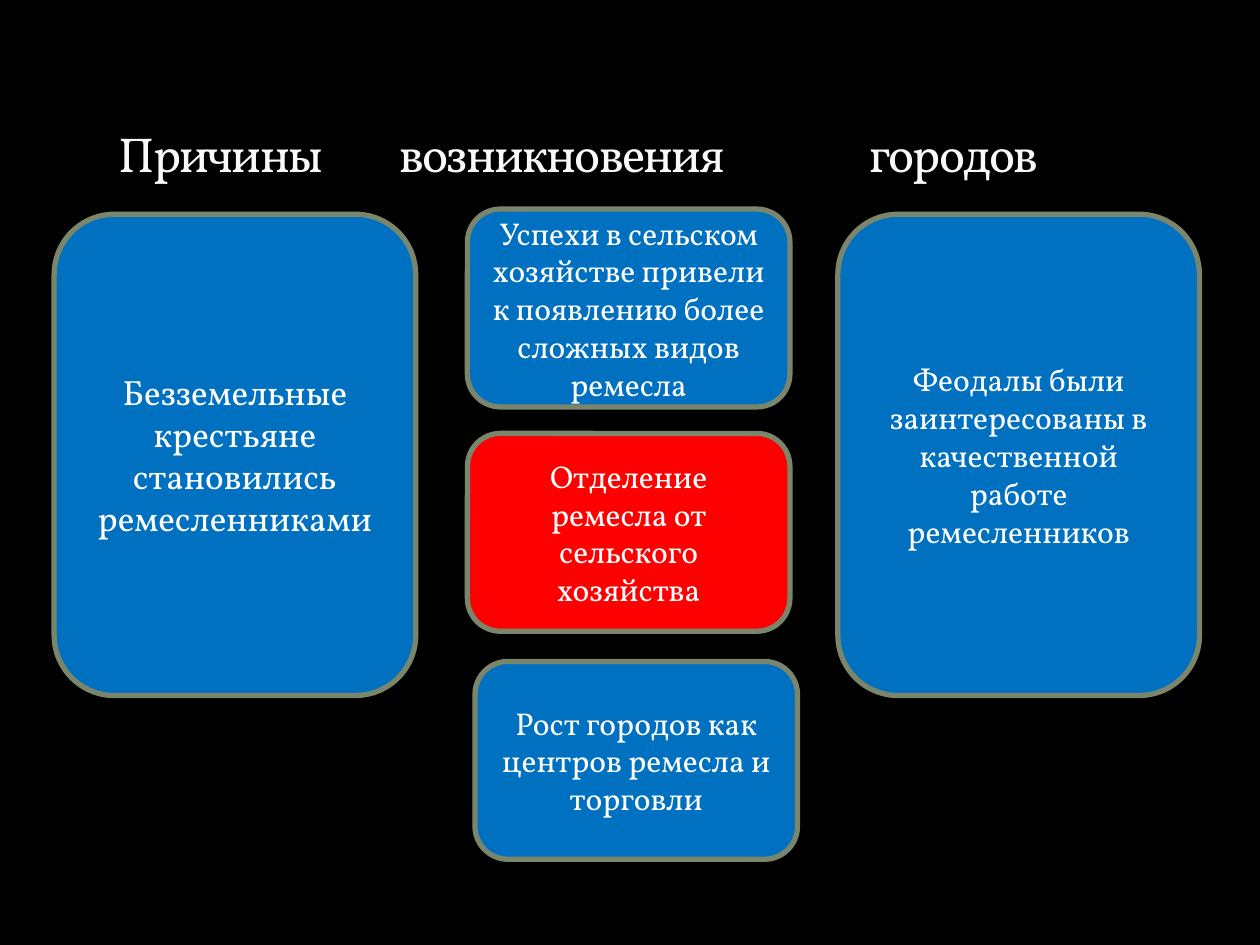
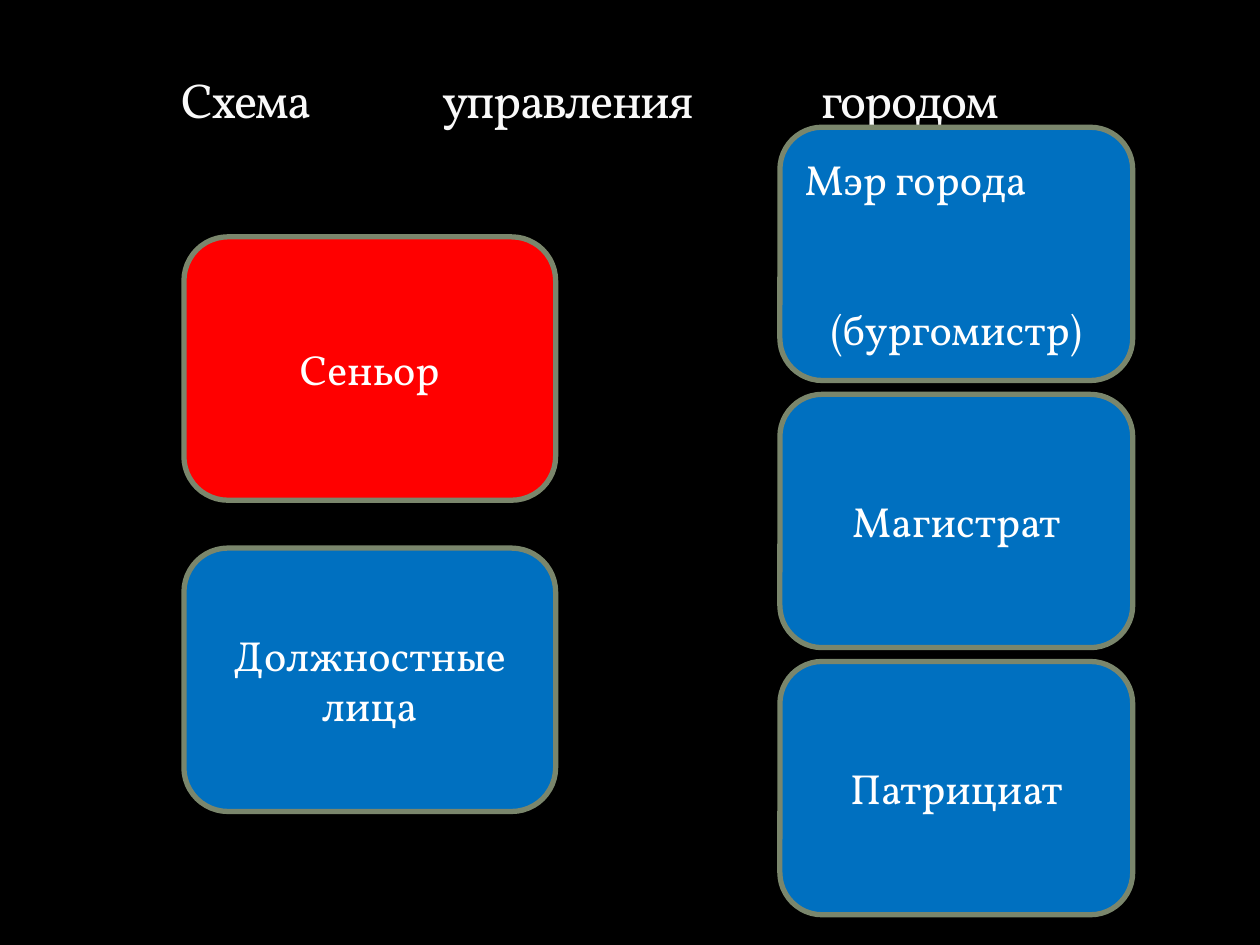
from lxml.etree import SubElement
from pptx import Presentation
from pptx.dml.color import RGBColor
from pptx.enum.shapes import MSO_SHAPE as Shape
from pptx.enum.text import MSO_ANCHOR as Anchor, PP_ALIGN as Align
from pptx.oxml.ns import qn
from pptx.util import Inches, Pt

FONT = "Vollkorn"
BLACK, WHITE, TITLE_WHITE = "000000", "FFFFFF", "F9F9F9"
BLUE, RED, OLIVE = "0070C0", "FF0000", "7A866C"
COLUMNS, ROWS = 100, 75


def paint(color_format, color):
    color_format.rgb = RGBColor.from_string(color)


class Deck:
    """Draws titles and rounded cards on a black grid of 100 columns by 75 rows."""

    def __init__(self):
        self.presentation = Presentation()
        self.presentation.slide_width = Inches(10)
        self.presentation.slide_height = Inches(7.5)
        background = self.presentation.slide_master.background.fill
        background.solid()
        paint(background.fore_color, BLACK)
        self.slide = None

    def place(self, column, row, width, height):
        across = self.presentation.slide_width / COLUMNS
        down = self.presentation.slide_height / ROWS
        return [round(size) for size in
                (column * across, row * down, width * across, height * down)]

    def style(self, paragraph, size, color, align):
        paragraph.alignment = align
        paragraph.font.name = FONT
        paragraph.font.size = Pt(size)
        paint(paragraph.font.color, color)

    def add_slide(self, words, box, inset, stops):
        self.slide = self.presentation.slides.add_slide(self.presentation.slide_layouts[5])
        title = self.slide.shapes.title
        title.left, title.top, title.width, title.height = self.place(*box)
        frame = title.text_frame
        frame.vertical_anchor = Anchor.BOTTOM
        frame.margin_left = Inches(inset)
        frame.text = "\t".join(words)
        paragraph = frame.paragraphs[0]
        tabs = SubElement(paragraph._p.get_or_add_pPr(), qn("a:tabLst"))
        for stop in stops:
            SubElement(tabs, qn("a:tab"), pos=str(Inches(stop)), algn="l")
        self.style(paragraph, 28, TITLE_WHITE, Align.LEFT)
        for run in paragraph.runs:
            run._r.get_or_add_rPr().set("spc", "-100")

    def add_card(self, text, box, size, color=BLUE):
        card = self.slide.shapes.add_shape(Shape.ROUNDED_RECTANGLE, *self.place(*box))
        card.shadow.inherit = False
        card.fill.solid()
        paint(card.fill.fore_color, color)
        paint(card.line.color, OLIVE)
        card.line.width = Pt(3)
        frame = card.text_frame
        frame.word_wrap = True
        frame.vertical_anchor = Anchor.MIDDLE
        frame.text = text
        for paragraph in frame.paragraphs:
            self.style(paragraph, size, WHITE, Align.CENTER)
        return card


def add_causes(deck):
    deck.add_slide(["Причины", "возникновения", "городов"],
                   (5, 1.7, 90, 13.3), 0.44, (2.23, 5.96))
    sides = [
        ("Безземельные крестьяне становились ремесленниками", 4.3, 20),
        ("Феодалы были заинтересованы в качественной работе ремесленников", 66.5, 18),
    ]
    for text, column, size in sides:
        deck.add_card(text, (column, 17, 28.7, 38.2), size)
    middle = [
        ("Успехи в сельском хозяйстве привели к появлению более сложных видов ремесла",
         37.1, 16.6, BLUE),
        ("Отделение ремесла от сельского хозяйства", 37.1, 34.4, RED),
        ("Рост городов как центров ремесла и торговли", 37.7, 52.5, BLUE),
    ]
    for text, column, row, color in middle:
        deck.add_card(text, (column, row, 25.6, 15.7), 18, color)


def add_government(deck):
    deck.add_slide(["Схема", "управления", "городом"],
                   (9.1, -0.1, 94.5, 10.8), 0.53, (2.07, 5.08))
    lordship = [("Сеньор", RED), ("Должностные лица", BLUE)]
    for index, (text, color) in enumerate(lordship):
        deck.add_card(text, (14.6, 18.8 + 24.7 * index, 29.5, 20.9), 24, color)
    council = ["Мэр города\n(бургомистр)", "Магистрат", "Патрициат"]
    cards = [deck.add_card(text, (61.9, 10.1 + 21.2 * index, 28, 20.1), 24)
             for index, text in enumerate(council)]
    mayor, burgomaster = cards[0].text_frame.paragraphs
    mayor.alignment = Align.LEFT
    burgomaster.space_before = Pt(57)


def main():
    deck = Deck()
    add_causes(deck)
    add_government(deck)
    deck.presentation.save("out.pptx")


if __name__ == "__main__":
    main()
